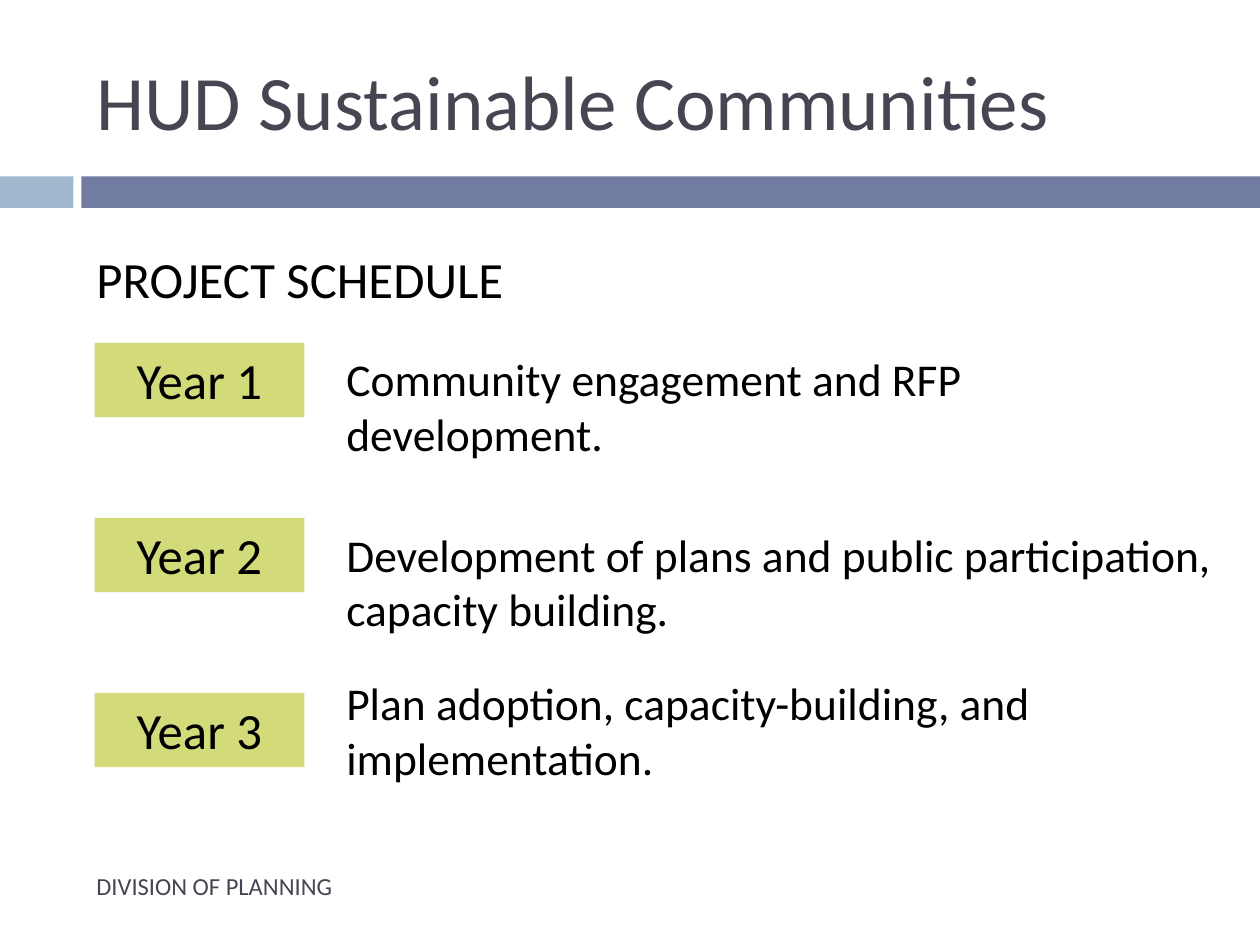
"""Build the project schedule slide."""
from pptx import Presentation
from pptx.dml.color import RGBColor
from pptx.enum.shapes import MSO_SHAPE
from pptx.enum.text import MSO_ANCHOR, PP_ALIGN
from pptx.util import Pt

RECTANGLE = MSO_SHAPE.RECTANGLE
TOP, MIDDLE = MSO_ANCHOR.TOP, MSO_ANCHOR.MIDDLE
LEFT, CENTER = PP_ALIGN.LEFT, PP_ALIGN.CENTER
BLACK = RGBColor(0x00, 0x00, 0x00)
SLATE = RGBColor(0x46, 0x46, 0x53)
LIGHT_BLUE = RGBColor(0x9F, 0xB8, 0xCD)
INDIGO = RGBColor(0x72, 0x7C, 0xA3)
LIME = RGBColor(0xD2, 0xDA, 0x7A)


def write(box, text, size, color=BLACK, align=LEFT, anchor=TOP):
    frame = box.text_frame
    frame.text = text
    frame.word_wrap = True
    frame.vertical_anchor = anchor
    for para in frame.paragraphs:
        para.alignment = align
        para.font.name = "Calibri"
        para.font.size = Pt(size)
        para.font.color.rgb = color


def add_bar(left, top, width, height, color):
    bar = page.shapes.add_shape(RECTANGLE, Pt(left), Pt(top), Pt(width), Pt(height))
    bar.shadow.inherit = False
    bar.fill.solid()
    bar.fill.fore_color.rgb = color
    bar.line.fill.background()
    return bar


deck = Presentation()
deck.slide_width, deck.slide_height = Pt(720), Pt(540)
page = deck.slides.add_slide(deck.slide_layouts[5])

add_bar(0, 100.8, 42, 18, LIGHT_BLUE)
add_bar(46.5, 100.8, 673.5, 18, INDIGO)

title = page.shapes.title
title.left, title.top, title.width, title.height = Pt(48), Pt(18), Pt(642), Pt(78)
write(title, "HUD Sustainable Communities", 44, SLATE, anchor=MIDDLE)

heading = page.shapes.add_textbox(Pt(48), Pt(138), Pt(468), Pt(42))
write(heading, "PROJECT SCHEDULE", 29)

schedule = [
    ("Community engagement and RFP development.", 197.3, 505),
    ("Development of plans and public participation,\ncapacity building.", 297.4, 513.5),
    ("Plan adoption, capacity-building, and\nimplementation.", 382.3, 416),
]
for index, (activity, top, width) in enumerate(schedule):
    year = add_bar(54, 196 + 100 * index, 120, 42.4, LIME)
    write(year, f"Year {index + 1}", 29, align=CENTER)
    description = page.shapes.add_textbox(Pt(190.8), Pt(top), Pt(width), Pt(70.6))
    write(description, activity, 26)

footer = page.shapes.add_textbox(Pt(48), Pt(492), Pt(427), Pt(28.8))
write(footer, "DIVISION OF PLANNING", 14, SLATE, anchor=MIDDLE)

deck.save("out.pptx")
